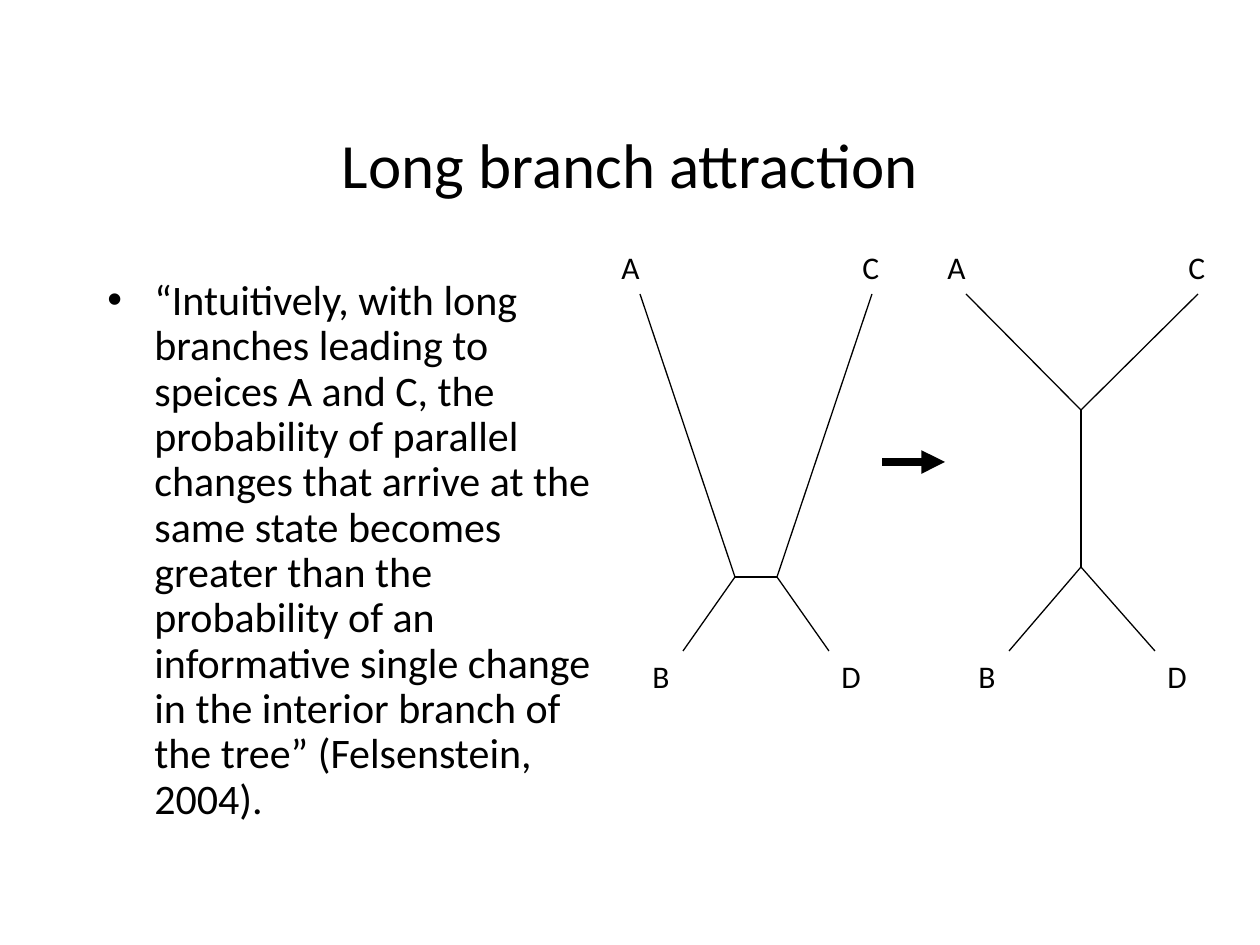
from lxml import etree
from pptx import Presentation, util as u
from pptx.dml.color import RGBColor
from pptx.enum import shapes, text
from pptx.oxml.ns import qn

EMU_PER_PX = 914400 / 126
BLACK = "000000"


def px(*lengths):
    return [u.Emu(round(length * EMU_PER_PX)) for length in lengths]


def color(hex_string):
    return RGBColor.from_string(hex_string)


deck = Presentation()
deck.slide_width, deck.slide_height = px(1260, 945)
page = deck.slides.add_slide(deck.slide_layouts[5])

# Text: string, place, size, alignment, anchor, autosize
quote = (
    "“Intuitively, with long branches leading to speices A and C, the "
    "probability of parallel changes that arrive at the same state becomes "
    "greater than the probability of an informative single change in the "
    "interior branch of the tree” (Felsenstein, 2004)."
)
left, center = text.PP_ALIGN.LEFT, text.PP_ALIGN.CENTER
top, middle = text.MSO_ANCHOR.TOP, text.MSO_ANCHOR.MIDDLE
fixed, grow = text.MSO_AUTO_SIZE.NONE, text.MSO_AUTO_SIZE.SHAPE_TO_FIT_TEXT
texts = [
    ("Long branch attraction", (95, 84, 1070, 158), 36, center, middle, fixed),
    (quote, (95, 273, 525, 567), 24, left, top, fixed),
]

# Each tree: horizontal shift and the joint where each species attaches
trees = [
    (0, {"A": (735, 577), "B": (735, 577), "C": (777, 577), "D": (777, 577)}),
    (326, {"A": (1081, 410), "C": (1081, 410), "B": (1081, 567), "D": (1081, 567)}),
]
tips = {"A": (640, 294), "B": (683, 651), "C": (872, 294), "D": (829, 651)}
labels = {"A": (609, 242), "B": (640, 651), "C": (850, 242), "D": (829, 651)}

# Lines: start, end, width in points
lines = []
for shift, joints in trees:
    lines.append((joints["A"], joints["D"], 0.75))
    for species, joint in joints.items():
        tip_x, tip_y = tips[species]
        lines.append((joint, (tip_x + shift, tip_y), 0.75))
        label_x, label_y = labels[species]
        place = (label_x + shift, label_y, 42, 63)
        texts.append((species, place, 18, left, top, grow))
lines.append(((882, 462), (945, 462), 4.5))

# Draw the branches and the arrow
for start, end, width in lines:
    line = page.shapes.add_connector(shapes.MSO_CONNECTOR.STRAIGHT, *px(*start, *end))
    line.line.color.rgb = color(BLACK)
    line.line.width = u.Pt(width)
    etree.SubElement(line._element.spPr, qn("a:effectLst"))
arrow_line = line.line._get_or_add_ln()
etree.SubElement(arrow_line, qn("a:tailEnd"), type="triangle")

# Write the title, the quote and the species labels
for string, place, size, alignment, anchor, autosize in texts:
    if size == 36:
        box = page.shapes.title
        box.left, box.top, box.width, box.height = px(*place)
    else:
        box = page.shapes.add_textbox(*px(*place))
    frame = box.text_frame
    frame_format = {"word_wrap": True, "vertical_anchor": anchor, "auto_size": autosize}
    for name, value in frame_format.items():
        setattr(frame, name, value)
    para = frame.paragraphs[0]
    para.alignment = alignment
    span = para.add_run()
    span.text = string
    span.font.color.rgb = color(BLACK)
    for name, value in {"name": "Calibri", "size": u.Pt(size)}.items():
        setattr(span.font, name, value)

    # Bullet with a hanging indent for the quote
    if string == quote:
        para.line_spacing = 0.9
        properties = para._p.get_or_add_pPr()
        indent = px(47)[0]
        properties.set("marL", str(indent))
        properties.set("indent", str(-indent))
        etree.SubElement(properties, qn("a:buFont"), typeface="Arial")
        etree.SubElement(properties, qn("a:buChar"), char="•")

deck.save("out.pptx")
